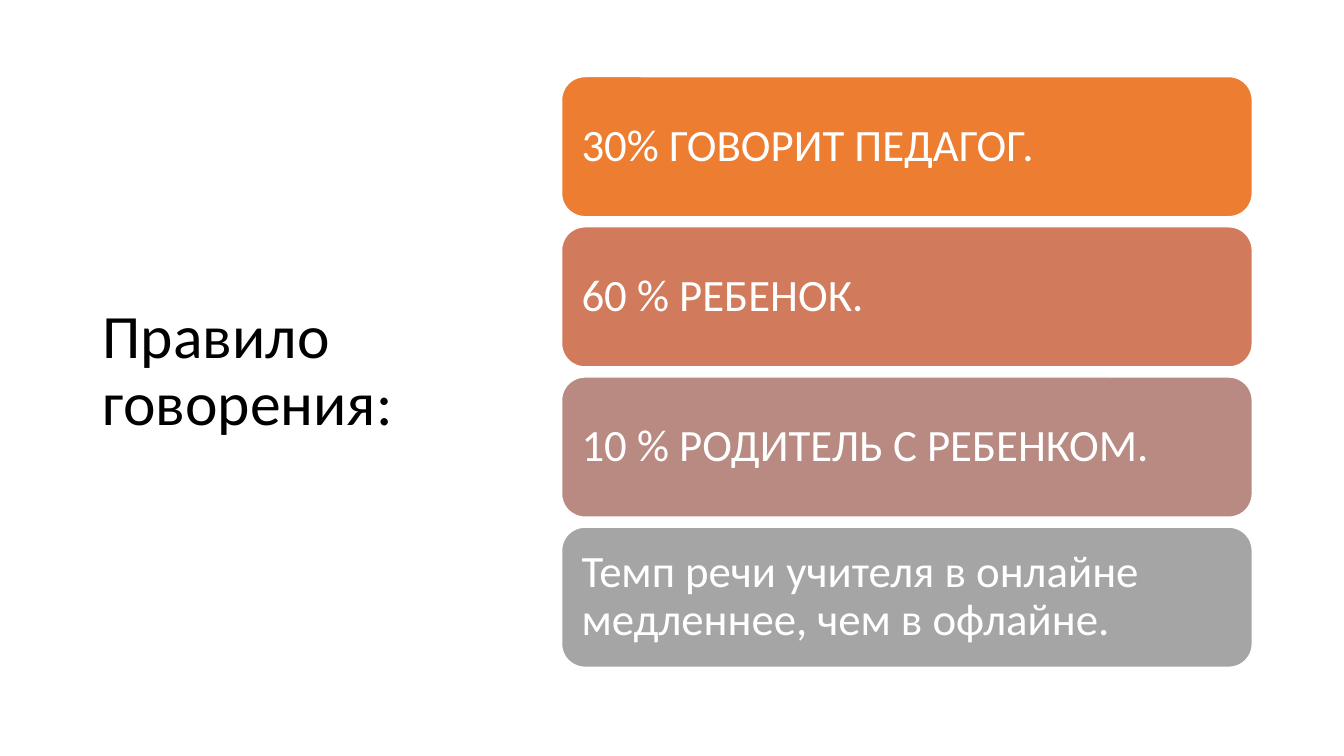
import pptx
import pptx.dml.color
import pptx.enum.shapes
import pptx.enum.text
import pptx.util

RGB = pptx.dml.color.RGBColor
IN = pptx.util.Inches
BLACK = RGB(0x00, 0x00, 0x00)
WHITE = RGB(0xFF, 0xFF, 0xFF)
ORANGE = RGB(0xED, 0x7D, 0x31)
CORAL = RGB(0xD1, 0x7B, 0x5C)
ROSE = RGB(0xB9, 0x8A, 0x82)
GREY = RGB(0xA5, 0xA5, 0xA5)

WIDE, HIGH = 13.33, 7.5
RULES = [
    ("30% ГОВОРИТ ПЕДАГОГ.", ORANGE),
    ("60 % РЕБЕНОК.", CORAL),
    ("10 % РОДИТЕЛЬ С РЕБЕНКОМ.", ROSE),
    ("Темп речи учителя в онлайне медленнее, чем в офлайне.", GREY),
]


def write(shape, text, size=32, color=WHITE, side=0.13, edge=0.13):
    """Put left-aligned, vertically centred text into a shape."""
    frame = shape.text_frame
    frame.word_wrap = True
    frame.vertical_anchor = pptx.enum.text.MSO_ANCHOR.MIDDLE
    frame.margin_left = frame.margin_right = IN(side)
    frame.margin_top = frame.margin_bottom = IN(edge)
    para = frame.paragraphs[0]
    para.alignment = pptx.enum.text.PP_ALIGN.LEFT
    para.line_spacing = 0.9
    run = para.add_run()
    run.text = text
    run.font.name = "Calibri"
    run.font.size = pptx.util.Pt(size)
    run.font.color.rgb = color


def title(slide, text, box):
    """Place the slide title in its box."""
    label = slide.shapes.add_textbox(*map(IN, box))
    write(label, text, size=44, color=BLACK, side=0.1, edge=0.05)


def stack(slide, rules, box, gap):
    """Stack one rounded card per rule, evenly filling the box."""
    left, top, width, height = box
    tall = (height - gap * (len(rules) - 1)) / len(rules)
    for row, (text, color) in enumerate(rules):
        card = slide.shapes.add_shape(
            pptx.enum.shapes.MSO_SHAPE.ROUNDED_RECTANGLE,
            IN(left), IN(top + row * (tall + gap)), IN(width), IN(tall))
        card.shadow.inherit = False
        card.fill.solid()
        card.fill.fore_color.rgb = color
        card.line.color.rgb = WHITE
        card.line.width = pptx.util.Pt(1)
        write(card, text)


def main():
    """Build and save the slide."""
    deck = pptx.Presentation()
    deck.slide_width, deck.slide_height = IN(WIDE), IN(HIGH)
    slide = deck.slides.add_slide(deck.slide_layouts[6])
    title(slide, "Правило говорения:", (0.92, 0.68, 3.69, 6.02))
    stack(slide, RULES, (5.57, 0.76, 6.85, 5.86), gap=0.1)
    deck.save("out.pptx")


if __name__ == "__main__":
    main()
